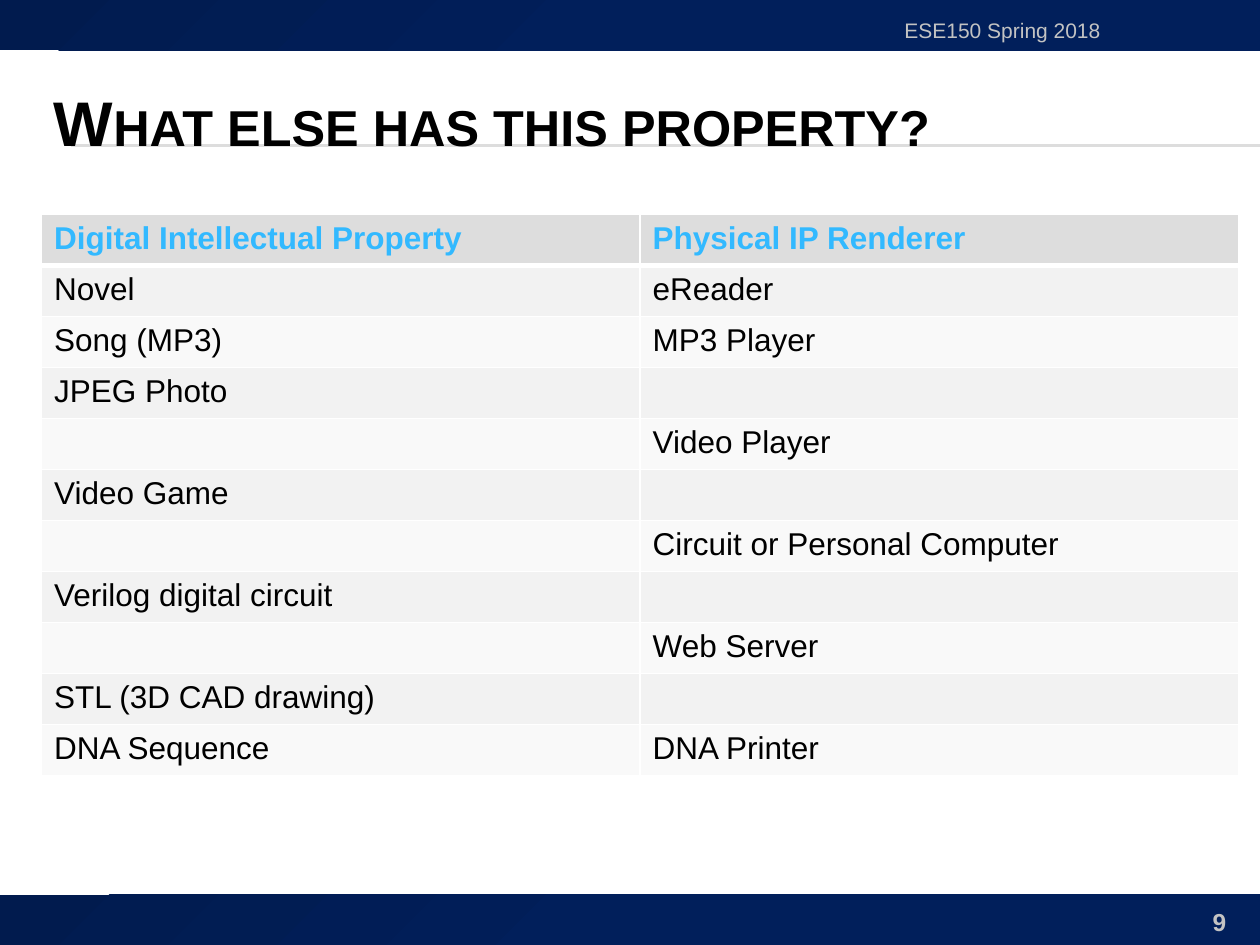
from lxml.etree import SubElement
from pptx import Presentation
from pptx.dml.color import RGBColor
from pptx.enum.shapes import MSO_CONNECTOR as Connector, MSO_SHAPE as Shape
from pptx.enum.text import MSO_ANCHOR as Anchor, PP_ALIGN as Align
from pptx.oxml.ns import qn
from pptx.util import Inches, Pt

COLORS = {
    "white": "FFFFFF",
    "black": "000000",
    "rule": "DDDDDD",
    "band_start": "011B4E",
    "band_end": "011F5B",
    "header_fill": "DDDDDD",
    "header_text": "32B9FF",
    "odd_row": "F2F2F2",
    "even_row": "F9F9F9",
    "muted": "C3C3C3",
}

PAIRS = [
    ("Digital Intellectual Property", "Physical IP Renderer"),
    ("Novel", "eReader"),
    ("Song (MP3)", "MP3 Player"),
    ("JPEG Photo", ""),
    ("", "Video Player"),
    ("Video Game", ""),
    ("", "Circuit or Personal Computer"),
    ("Verilog digital circuit", ""),
    ("", "Web Server"),
    ("STL (3D CAD drawing)", ""),
    ("DNA Sequence", "DNA Printer"),
]


def rgb(name):
    return RGBColor.from_string(COLORS[name])


def write(frame, text, size=18, color="black", bold=False, align=Align.LEFT, small_caps=False):
    paragraph = frame.paragraphs[0]
    paragraph.alignment = align
    paragraph.font.size = Pt(size)
    if not text:
        return
    run = paragraph.add_run()
    run.text = text
    run.font.name = "Arial"
    run.font.size = Pt(size)
    run.font.bold = bold
    run.font.color.rgb = rgb(color)
    if small_caps:
        run.font._element.set("cap", "small")


class SlideBuilder:
    def __init__(self, slide):
        self.slide = slide
        self.border_color = "white"

    def rule(self, y):
        rule = self.slide.shapes.add_connector(
            Connector.STRAIGHT, Inches(0.56), Inches(y), Inches(10), Inches(y))
        rule.line.color.rgb = rgb("rule")
        rule.line.width = Pt(0.75)
        SubElement(rule._element.spPr, qn("a:effectLst"))

    def band(self, top):
        band = self.slide.shapes.add_shape(
            Shape.RECTANGLE, Inches(0), Inches(top), Inches(10), Inches(0.4))
        band.shadow.inherit = False
        band.line.fill.background()
        band.fill.gradient()
        band.fill.gradient_angle = 315
        stops = zip(band.fill.gradient_stops, ("band_start", "band_end"), (0, 0.5))
        for stop, color, position in stops:
            stop.color.rgb = rgb(color)
            stop.position = position

    def text(self, text, left, top, width, height, anchor=Anchor.TOP, **style):
        box = self.slide.shapes.add_textbox(
            Inches(left), Inches(top), Inches(width), Inches(height))
        box.text_frame.word_wrap = True
        box.text_frame.vertical_anchor = anchor
        write(box.text_frame, text, **style)

    def border(self, cell, side, points):
        properties = cell._tc.get_or_add_tcPr()
        line = SubElement(properties, qn(f"a:ln{side}"), w=str(Pt(points)))
        fill = SubElement(line, qn("a:solidFill"))
        SubElement(fill, qn("a:srgbClr"), val=COLORS[self.border_color])

    def table(self, pairs, left, top, width, height):
        table = self.slide.shapes.add_table(
            len(pairs), len(pairs[0]), Inches(left), Inches(top),
            Inches(width), Inches(height)).table
        for row, pair in enumerate(pairs):
            header = row == 0
            fill = "header_fill" if header else "odd_row" if row % 2 else "even_row"
            for column, entry in enumerate(pair):
                cell = table.cell(row, column)
                widths = {"L": 1, "R": 1, "T": 3 if row == 1 else 1, "B": 3 if header else 1}
                for side, points in widths.items():
                    self.border(cell, side, points)
                cell.fill.solid()
                cell.fill.fore_color.rgb = rgb(fill)
                write(cell.text_frame, entry, bold=header,
                      color="header_text" if header else "black")


def main():
    deck = Presentation()
    deck.slide_width, deck.slide_height = Inches(10), Inches(7.5)
    builder = SlideBuilder(deck.slides.add_slide(deck.slide_layouts[6]))
    for y in (1.15, 1.16):
        builder.rule(y)
    for top in (0, 7.1):
        builder.band(top)
    builder.text("What else has this property?", 0.33, 0.5, 9.5, 0.92,
                 anchor=Anchor.MIDDLE, size=36, bold=True, small_caps=True)
    builder.table(PAIRS, 0.33, 1.7, 9.5, 4.46)
    builder.text("ESE150 Spring 2018", 7.08, 0.08, 2.75, 0.32,
                 anchor=Anchor.MIDDLE, size=12, color="muted")
    builder.text("9", 9, 7.15, 0.83, 0.27, size=14, color="muted",
                 bold=True, align=Align.RIGHT)
    deck.save("out.pptx")


if __name__ == "__main__":
    main()
